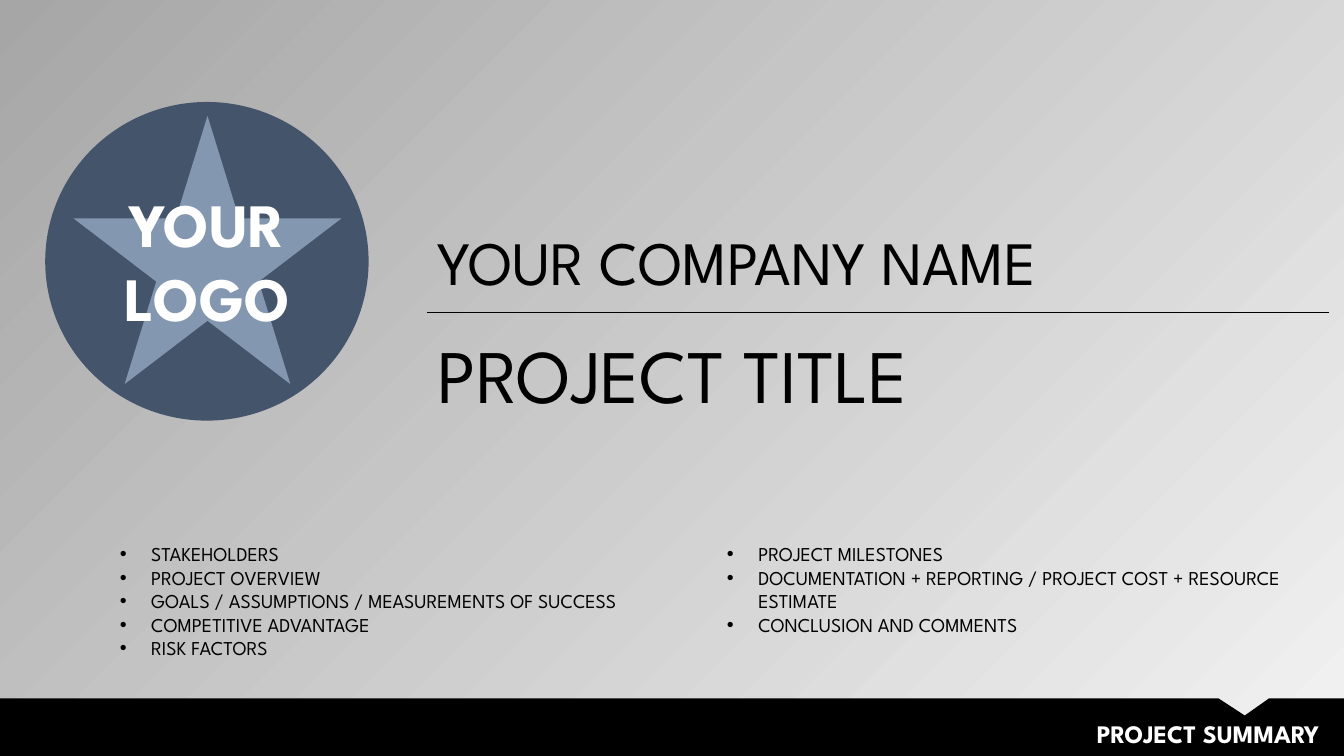
from dataclasses import dataclass

from lxml.etree import SubElement as Sub
from pptx import Presentation
from pptx.dml.color import RGBColor as RGB
from pptx.enum.shapes import MSO_CONNECTOR as LINE, MSO_SHAPE as SHAPE
from pptx.enum.text import PP_ALIGN as ALIGN
from pptx.oxml.ns import qn
from pptx.slide import Slide
from pptx.util import Cm, Pt

COLORS = {"black": "000000", "white": "FFFFFF", "navy": "44546A",
          "steel": "8497B0", "light": "F2F2F2", "grey": "A6A6A6"}
FONT = "League Spartan"
WIDE, HIGH = 33.87, 19.05
LEFT = 10.77
INDENT = 0.79


@dataclass
class Text:
    box: tuple[float, ...]
    lines: list[str]
    size: int
    color: str = "black"
    bold: bool = False
    align: ALIGN = ALIGN.LEFT
    bullet: bool = False


@dataclass
class Form:
    kind: SHAPE
    box: tuple[float, ...]
    color: str


def tint(name: str) -> RGB:
    return RGB.from_string(COLORS[name])


def paint(shape, color: str) -> None:
    shape.shadow.inherit = False
    shape.fill.solid()
    shape.fill.fore_color.rgb = tint(color)
    shape.line.fill.background()


def add_form(slide: Slide, form: Form) -> None:
    paint(slide.shapes.add_shape(form.kind, *map(Cm, form.box)), form.color)


def add_bullet(para) -> None:
    props = para._p.get_or_add_pPr()
    props.set("marL", str(Cm(INDENT)))
    props.set("indent", str(-Cm(INDENT)))
    Sub(props, qn("a:buFont"), typeface="Arial")
    Sub(props, qn("a:buChar"), char="•")


def add_text(slide: Slide, text: Text) -> None:
    frame = slide.shapes.add_textbox(*map(Cm, text.box)).text_frame
    frame.word_wrap = True
    style = {"name": FONT, "size": Pt(text.size), "bold": text.bold}
    for i, line in enumerate(text.lines):
        para = frame.add_paragraph() if i else frame.paragraphs[0]
        para.alignment = text.align
        if text.bullet:
            add_bullet(para)
        run = para.add_run()
        run.text = line
        for key, value in style.items():
            setattr(run.font, key, value)
        run.font.color.rgb = tint(text.color)


def add_back(slide: Slide) -> None:
    fill = slide.background.fill
    fill.gradient()
    fill.gradient_angle = 135
    for stop, name in zip(fill.gradient_stops, ("light", "grey")):
        stop.color.rgb = tint(name)


def add_footer(slide: Slide) -> None:
    top = 17.6
    edge = [(30.71, top), (31.37, 18.03), (31.98, top),
            (WIDE, top), (WIDE, HIGH), (0, HIGH)]
    path = slide.shapes.build_freeform(Cm(0), Cm(top))
    path.add_line_segments([(Cm(x), Cm(y)) for x, y in edge], close=True)
    paint(path.convert_to_shape(), "black")


def add_rule(slide: Slide) -> None:
    y = Cm(7.87)
    rule = slide.shapes.add_connector(LINE.STRAIGHT, Cm(LEFT), y, Cm(33.5), y)
    rule.line.color.rgb = tint("black")
    rule.line.width = Pt(0.5)
    Sub(rule._element.spPr, qn("a:effectLst"))


# Badge
FORMS = [Form(SHAPE.OVAL, (1.14, 2.57, 8.15, 8.03), "navy"),
         Form(SHAPE.STAR_5_POINT, (1.85, 2.92, 6.76, 6.76), "steel")]

# Headings and badge wording
TEXTS = [
    Text((16.28, 17.98, 17.22, 1.02), ["PROJECT SUMMARY"], 18, "white", True,
         ALIGN.RIGHT),
    Text((LEFT, 5.51, 19.79, 2.13), ["YOUR COMPANY NAME"], 44),
    Text((1.85, 4.57, 6.76, 4.01), ["YOUR", "LOGO"], 44, "white", True,
         ALIGN.CENTER),
    Text((LEFT, 8.13, 21.82, 2.57), ["PROJECT TITLE"], 54),
]

# Contents, one list per column
TOPICS = [
    ["STAKEHOLDERS", "PROJECT OVERVIEW",
     "GOALS / ASSUMPTIONS / MEASUREMENTS OF SUCCESS",
     "COMPETITIVE ADVANTAGE", "RISK FACTORS"],
    ["PROJECT MILESTONES",
     "DOCUMENTATION + REPORTING / PROJECT COST + RESOURCE ESTIMATE",
     "CONCLUSION AND COMMENTS"],
]
TEXTS += [Text((2.77 + 15.3 * i, 13.54, 15.8, 3.84), lines, 14, bullet=True)
          for i, lines in enumerate(TOPICS)]


def main() -> None:
    deck = Presentation()
    deck.slide_width, deck.slide_height = Cm(WIDE), Cm(HIGH)
    slide = deck.slides.add_slide(deck.slide_layouts[6])
    add_back(slide)
    add_footer(slide)
    for form in FORMS:
        add_form(slide, form)
    for text in TEXTS:
        add_text(slide, text)
    add_rule(slide)
    deck.save("out.pptx")


if __name__ == "__main__":
    main()
